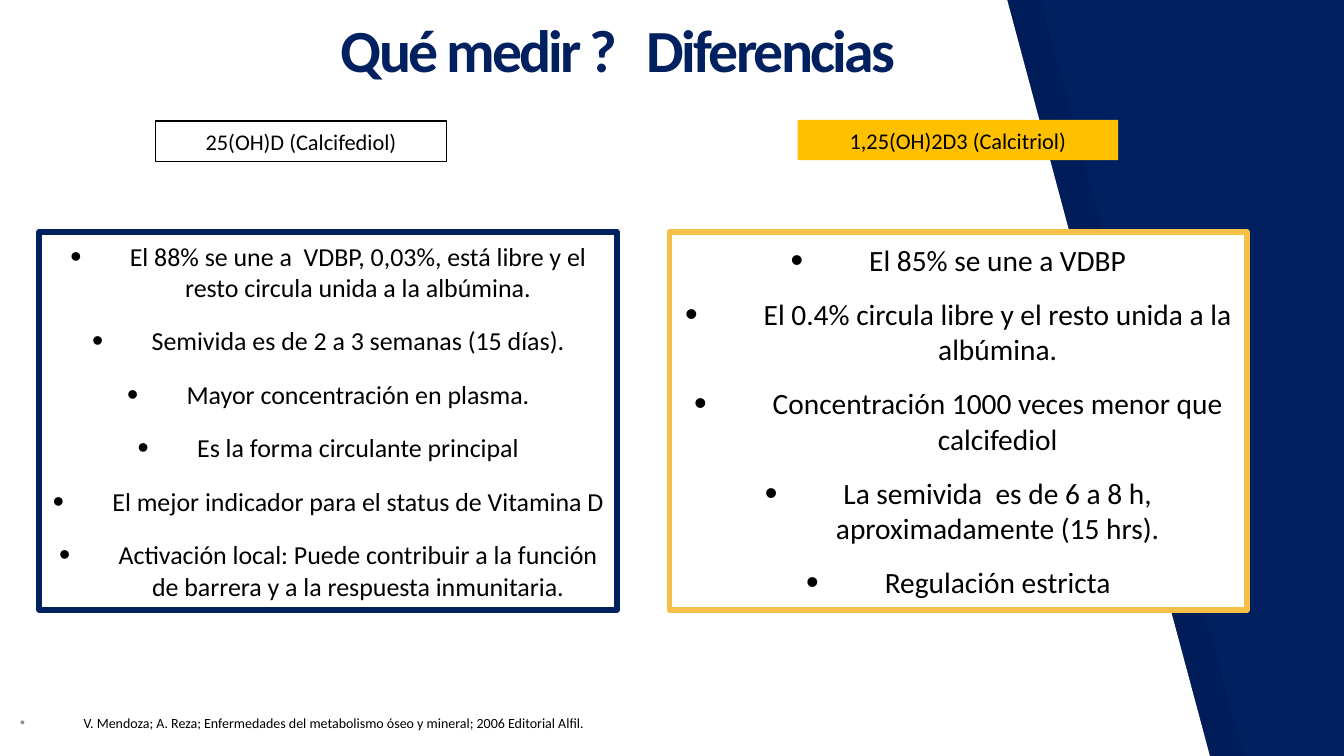
from lxml import etree
from pptx import Presentation
from pptx.dml.color import RGBColor
from pptx.enum import shapes, text
from pptx.oxml.ns import qn
from pptx.util import Inches, Pt

NAVY, WHITE, BLACK, GOLD = "002060", "FFFFFF", "000000", "FFC000"


def paint(fill, hue):
    fill.solid()
    fill.fore_color.rgb = RGBColor.from_string(hue)


def write(shape, lines, size, hue=BLACK, align="CENTER", anchor="MIDDLE",
          inset=0.07, gap=0, indent=0, dot=BLACK, scale=100):
    frame = shape.text_frame
    frame.word_wrap = True
    frame.vertical_anchor = text.MSO_ANCHOR[anchor]
    frame.margin_left = frame.margin_right = Inches(inset)
    frame.margin_top = frame.margin_bottom = Inches(inset)
    for i, line in enumerate(lines):
        para = frame.add_paragraph() if i else frame.paragraphs[0]
        para.alignment = text.PP_ALIGN[align]
        if indent:
            props = para._p.get_or_add_pPr()
            props.set("marL", str(Inches(indent)))
            props.set("indent", str(-Inches(indent)))
            tint = etree.SubElement(props, qn("a:buClr"))
            etree.SubElement(tint, qn("a:srgbClr"), val=dot)
            etree.SubElement(props, qn("a:buSzPct"), val=str(scale * 1000))
            etree.SubElement(props, qn("a:buFont"), typeface="Arial")
            etree.SubElement(props, qn("a:buChar"), char="•")
        if i:
            para.space_before = Pt(gap)
        run = para.add_run()
        run.text = line
        run.font.name = "Calibri"
        run.font.size = Pt(size)
        paint(run.font.fill, hue)
    return run


deck = Presentation()
deck.slide_width, deck.slide_height = Inches(13.33), Inches(7.5)
slide = deck.slides.add_slide(deck.slide_layouts[6])
paint(slide.background.fill, NAVY)
items = slide.shapes

# Slanted white page over its faint shade
for left, hue in ((0.33, BLACK), (0, WHITE)):
    pen = items.build_freeform(Inches(left), 0, scale=1.0)
    pen.add_line_segments([(Inches(left + x), Inches(y))
                           for x, y in ((0, 7.5), (12, 7.5), (9.99, 0))])
    page = pen.convert_to_shape()
    page.shadow.inherit = False
    page.line.fill.background()
    paint(page.fill, hue)
    if left:
        tone = page._element.spPr.find(".//" + qn("a:srgbClr"))
        etree.SubElement(tone, qn("a:alpha"), val="7000")

# Headings and the lists below them: place, fill, line, text
left = [
    "El 88% se une a  VDBP, 0,03%, está libre y el resto circula unida a la albúmina.",
    "Semivida es de 2 a 3 semanas (15 días).",
    "Mayor concentración en plasma.",
    "Es la forma circulante principal",
    "El mejor indicador para el status de Vitamina D",
    "Activación local: Puede contribuir a la función de barrera y a la respuesta inmunitaria.",
]
right = [
    "El 85% se une a VDBP",
    "El 0.4% circula libre y el resto unida a la albúmina.",
    "Concentración 1000 veces menor que calcifediol",
    "La semivida  es de 6 a 8 h, aproximadamente (15 hrs).",
    "Regulación estricta",
]
boxes = [
    ((0.39, 2.3, 5.73, 3.75), WHITE, NAVY, 4, left,
     dict(size=18.5, gap=16, indent=0.59, scale=123)),
    ((1.54, 1.2, 2.89, 0.4), WHITE, BLACK, 1, ["25(OH)D (Calcifediol)"],
     dict(size=16)),
    ((6.64, 2.3, 5.73, 3.75), WHITE, "F6C048", 4, right,
     dict(size=21, gap=13.5, indent=0.78, scale=123)),
    ((7.91, 1.19, 3.18, 0.4), GOLD, None, 0, ["1,25(OH)2D3 (Calcitriol)"],
     dict(size=16)),
]
for place, hue, edge, width, lines, style in boxes:
    box = items.add_shape(shapes.MSO_SHAPE.RECTANGLE, *map(Inches, place))
    box.shadow.inherit = False
    paint(box.fill, hue)
    if edge:
        paint(box.line.fill, edge)
        box.line.width = Pt(width)
    else:
        box.line.fill.background()
    write(box, lines, **style)

# Reference
note = items.add_textbox(*map(Inches, (0.13, 7.02, 13.02, 0.3)))
write(note, ["V. Mendoza; A. Reza; Enfermedades del metabolismo óseo y mineral; "
             "2006 Editorial Alfil."],
      10, align="LEFT", indent=0.63, dot="8E8C8E")

# Title
title = items.add_textbox(*map(Inches, (1.45, 0.37, 9.36, 0.6)))
run = write(title, ["Qué medir ?   Diferencias"], 42.7, NAVY,
            anchor="BOTTOM", inset=0.13)
run.font.bold = True
run._r.get_or_add_rPr().set("spc", "-200")

deck.save("out.pptx")
